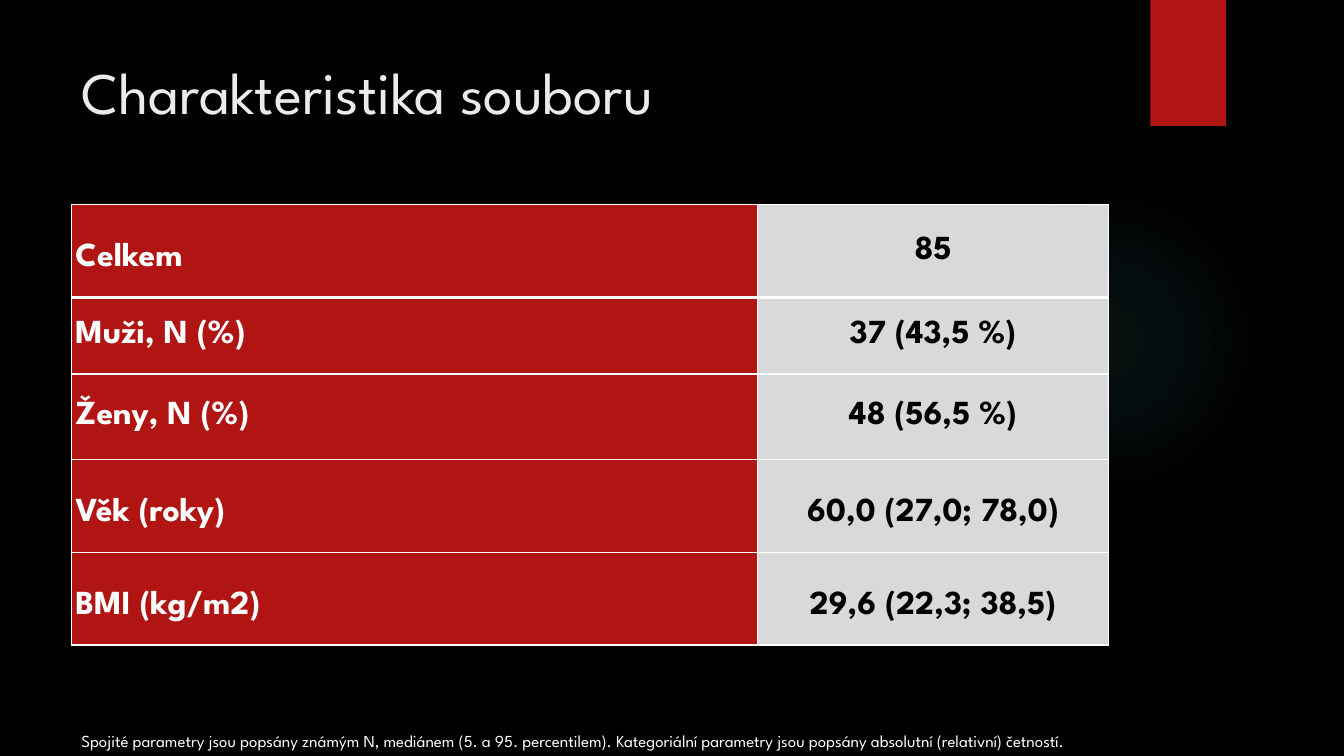
from lxml import etree
from pptx import Presentation
from pptx import util as u
from pptx.dml.color import RGBColor
from pptx.enum import shapes, text
from pptx.oxml import parse_xml
from pptx.oxml.ns import qn

NS = 'xmlns:a="http://schemas.openxmlformats.org/drawingml/2006/main"'
RED, GREY, WHITE, BLACK = "B01513", "D9D9D9", "FFFFFF", "000000"


def color(code):
    return RGBColor.from_string(code)


class Page:
    font = "League Spartan"
    pad = 2.88

    def __init__(self, deck):
        self.slide = deck.slides.add_slide(deck.slide_layouts[6])
        fill = self.slide.background.fill
        fill.solid()
        fill.fore_color.rgb = color(BLACK)

    def run(self, para, words, size, ink, bold=False):
        run = para.add_run()
        run.text = words
        run.font.name = self.font
        run.font.size = u.Pt(size)
        run.font.bold = bold
        run.font.color.rgb = color(ink)

    def shape(self, kind, *box):
        item = self.slide.shapes.add_shape(kind, *map(u.Pt, box))
        item.shadow.inherit = False
        item.line.fill.background()
        return item

    def block(self, ink, *box):
        item = self.shape(shapes.MSO_SHAPE.RECTANGLE, *box)
        item.fill.solid()
        item.fill.fore_color.rgb = color(ink)

    def glow(self, ink, stops, *box):
        item = self.shape(shapes.MSO_SHAPE.OVAL, *box)
        marks = "".join(
            f'<a:gs pos="{pos * 1000}"><a:srgbClr val="{ink}">'
            f'<a:alpha val="{alpha * 1000}"/></a:srgbClr></a:gs>'
            for pos, alpha in stops)
        grad = parse_xml(
            f'<a:gradFill {NS} rotWithShape="1"><a:gsLst>{marks}</a:gsLst>'
            '<a:path path="circle"><a:fillToRect l="50000" t="50000" '
            'r="50000" b="50000"/></a:path></a:gradFill>')
        item.element.spPr.find(qn("a:prstGeom")).addnext(grad)

    def label(self, words, size, ink, *box):
        frame = self.slide.shapes.add_textbox(*map(u.Pt, box)).text_frame
        frame.word_wrap = True
        frame.vertical_anchor = text.MSO_ANCHOR.TOP
        self.run(frame.paragraphs[0], words, size, ink)

    def edges(self, cell, widths):
        props = cell._tc.get_or_add_tcPr()
        for spot, (side, width) in enumerate(widths.items()):
            props.insert(spot, parse_xml(
                f'<a:ln{side} {NS} w="{u.Pt(width)}"><a:solidFill>'
                f'<a:srgbClr val="{WHITE}"/></a:solidFill></a:ln{side}>'))

    def cell(self, cell, words, ink, back, align, space):
        cell.fill.solid()
        cell.fill.fore_color.rgb = color(back)
        cell.vertical_anchor = text.MSO_ANCHOR.MIDDLE
        cell.margin_left = cell.margin_right = u.Pt(self.pad)
        cell.margin_top = cell.margin_bottom = u.Pt(self.pad)
        para = cell.text_frame.paragraphs[0]
        para.alignment = align
        para.line_spacing = space
        self.run(para, words, 24, ink, True)

    def table(self, rows, cols, left, top):
        high = sum(row[0] for row in rows)
        grid = self.slide.shapes.add_table(
            len(rows), len(cols),
            *map(u.Pt, (left, top, sum(cols), high))).table
        grid.first_row = grid.horz_banding = False
        for col, width in zip(grid.columns, cols):
            col.width = u.Pt(width)
        looks = ((WHITE, RED, text.PP_ALIGN.LEFT),
                 (BLACK, GREY, text.PP_ALIGN.CENTER))
        for r, (height, *pairs) in enumerate(rows):
            grid.rows[r].height = u.Pt(height)
            above, below = (3 if r == 1 else 1), (3 if r == 0 else 1)
            for c, (words, space) in enumerate(pairs):
                cell = grid.cell(r, c)
                self.cell(cell, words, *looks[c], space)
                self.edges(cell, {"L": 1, "R": 1, "T": above, "B": below})


def main():
    deck = Presentation()
    deck.slide_width, deck.slide_height = u.Pt(960), u.Pt(540)
    page = Page(deck)

    # Backdrop
    page.glow("50B9C1", [(0, 7), (36, 6), (69, 0)], 677.5, 132, 222, 222)
    page.block(RED, 821.8, 0, 54, 90)

    # Title
    page.label("Charakteristika souboru", 42, "EBEBEB", 51, 36, 741, 110)

    # Table: row height, then text and line spacing of each cell
    rows = [
        (66.2, ("Celkem", 1.5), ("85", 1.0)),
        (54.7, ("Muži, N (%)", 1.0), ("37 (43,5 %)", 1.0)),
        (61.3, ("Ženy, N (%)", 1.0), ("48 (56,5 %)", 1.0)),
        (66.2, ("Věk (roky)", 1.5), ("60,0 (27,0; 78,0)", 1.5)),
        (66.2, ("BMI (kg/m2)", 1.5), ("29,6 (22,3; 38,5)", 1.5)),
    ]
    page.table(rows, (490.2, 250.5), 51, 146.2)

    # Footnote
    page.label("Spojité parametry jsou popsány známým N, mediánem "
               "(5. a 95. percentilem). Kategoriální parametry jsou popsány "
               "absolutní (relativní) četností.",
               12, WHITE, 51, 518.4, 878, 21.6)

    deck.save("out.pptx")


if __name__ == "__main__":
    main()
